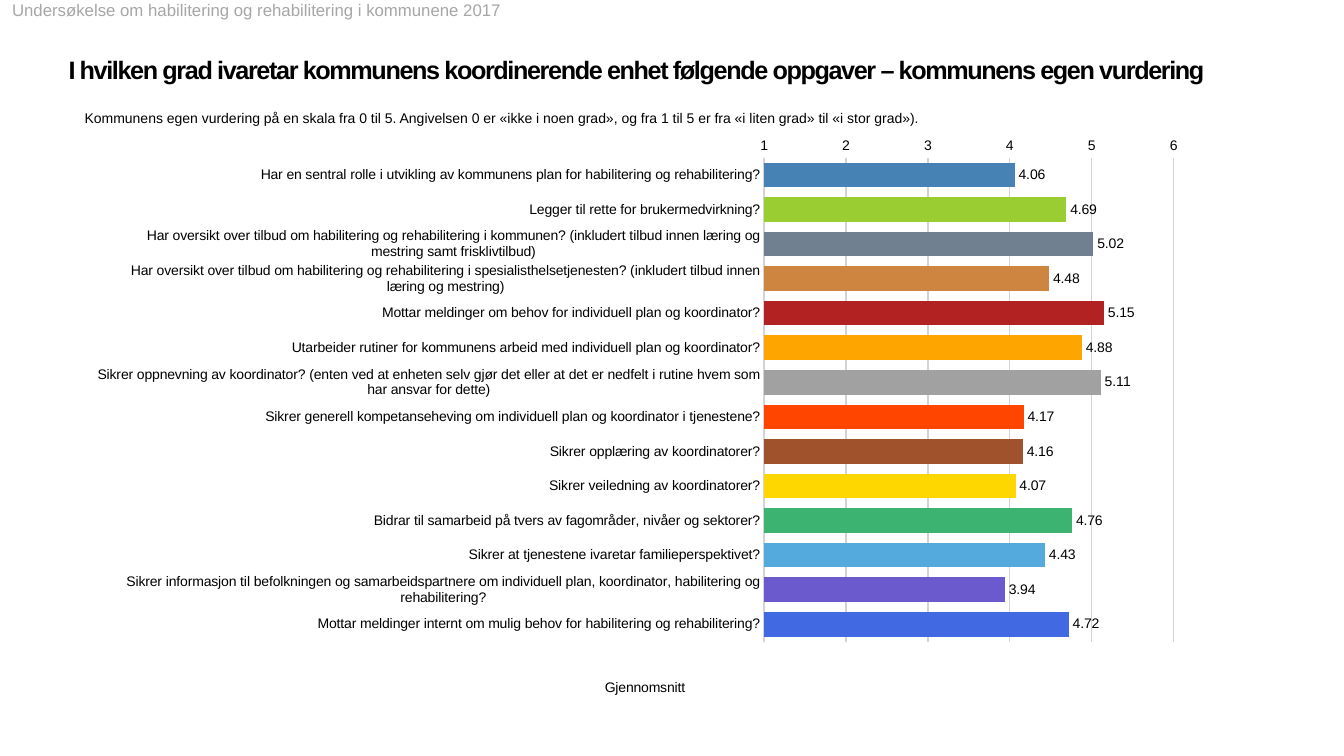
from lxml import etree
from pptx import Presentation
from pptx.chart.data import CategoryChartData
from pptx.dml.color import RGBColor
from pptx.enum import chart as ch, text
from pptx.oxml import ns
from pptx.util import Inches, Pt

FONT = "Arial"
TASKS = [
    ("Har en sentral rolle i utvikling av kommunens plan for habilitering og rehabilitering?", 4.06, "4682B4"),
    ("Legger til rette for brukermedvirkning?", 4.69, "9ACD32"),
    ("Har oversikt over tilbud om habilitering og rehabilitering i kommunen? "
     "(inkludert tilbud innen læring og mestring samt frisklivtilbud)", 5.02, "708090"),
    ("Har oversikt over tilbud om habilitering og rehabilitering i spesialisthelsetjenesten? "
     "(inkludert tilbud innen læring og mestring)", 4.48, "CD853F"),
    ("Mottar meldinger om behov for individuell plan og koordinator?", 5.15, "B22222"),
    ("Utarbeider rutiner for kommunens arbeid med individuell plan og koordinator?", 4.88, "FFA500"),
    ("Sikrer oppnevning av koordinator? (enten ved at enheten selv gjør det eller at det er "
     "nedfelt i rutine hvem som har ansvar for dette)", 5.11, "A1A1A1"),
    ("Sikrer generell kompetanseheving om individuell plan og koordinator i tjenestene?", 4.17, "FF4500"),
    ("Sikrer opplæring av koordinatorer?", 4.16, "A0522D"),
    ("Sikrer veiledning av koordinatorer?", 4.07, "FFD700"),
    ("Bidrar til samarbeid på tvers av fagområder, nivåer og sektorer?", 4.76, "3CB371"),
    ("Sikrer at tjenestene ivaretar familieperspektivet?", 4.43, "54A9DD"),
    ("Sikrer informasjon til befolkningen og samarbeidspartnere om individuell plan, "
     "koordinator, habilitering og rehabilitering?", 3.94, "6A5ACD"),
    ("Mottar meldinger internt om mulig behov for habilitering og rehabilitering?", 4.72, "4169E1"),
]


def rgb(value):
    return RGBColor.from_string(value)


def style(font, size, color="000000", bold=False):
    font.name, font.size, font.bold = FONT, Pt(size), bold
    font.color.rgb = rgb(color)


def add_text(s, box, words, size, color="000000", bold=False,
             anchor=text.MSO_ANCHOR.TOP, spacing=0):
    tf = s.shapes.add_textbox(*map(Inches, box)).text_frame
    tf.word_wrap = True
    tf.margin_left = tf.margin_right = tf.margin_top = tf.margin_bottom = 0
    tf.vertical_anchor = anchor
    p = tf.paragraphs[0]
    r = p.add_run()
    r.text = words
    style(p.font, size, color, bold)
    if spacing:
        r.font._element.set("spc", str(spacing * 100))


def set_layout(parent, after, target=None, **shares):
    """Place a chart part by shares of the chart's size."""
    for old in parent.findall(ns.qn("c:layout")):
        parent.remove(old)
    layout = etree.Element(ns.qn("c:layout"))
    manual = etree.SubElement(layout, ns.qn("c:manualLayout"))
    settings = {"layoutTarget": target} if target else {}
    settings.update(xMode="edge", yMode="edge", **shares)
    for name, value in settings.items():
        etree.SubElement(manual, ns.qn("c:" + name)).set("val", str(value))
    if after is None:
        parent.insert(0, layout)
    else:
        after.addnext(layout)


def add_bars(s, box):
    data = CategoryChartData()
    data.categories = [task for task, _, _ in TASKS]
    data.add_series("Series 1", [score for _, score, _ in TASKS])
    chart = s.shapes.add_chart(ch.XL_CHART_TYPE.BAR_CLUSTERED,
                               *map(Inches, box), data).chart
    chart.has_legend = chart.has_title = False
    style(chart.font, 10)

    # Bars and value labels
    plot = chart.plots[0]
    plot.gap_width = 40
    plot.vary_by_categories = False
    for i, (_, _, color) in enumerate(TASKS):
        fill = plot.series[0].points[i].format.fill
        fill.solid()
        fill.fore_color.rgb = rgb(color)
    plot.has_data_labels = True
    labels = plot.data_labels
    labels.show_value = True
    labels.number_format, labels.number_format_is_linked = "0.00", False
    labels.position = ch.XL_LABEL_POSITION.OUTSIDE_END
    style(labels.font, 10)

    # Axes: first task on top, scale at the bottom
    tasks, scale = chart.category_axis, chart.value_axis
    tasks.reverse_order = True
    tasks.crosses = ch.XL_AXIS_CROSSES.MAXIMUM
    for axis in (tasks, scale):
        axis.major_tick_mark = axis.minor_tick_mark = ch.XL_TICK_MARK.NONE
        axis.format.line.fill.background()
        style(axis.tick_labels.font, 10)
    scale.minimum_scale, scale.maximum_scale, scale.major_unit = 1, 6, 1
    scale.tick_labels.number_format = "General"
    scale.tick_labels.number_format_is_linked = False
    grid = scale.major_gridlines.format.line
    grid.color.rgb, grid.width = rgb("D3D3D3"), Pt(1)
    title = scale.axis_title
    title.text_frame.text = "Gjennomsnitt"
    style(title.text_frame.paragraphs[0].font, 10)

    # Plot area and axis title
    title_xml = title._element
    set_layout(title_xml, title_xml.find(ns.qn("c:tx")), x=0.46, y=0.93)
    plot_area = chart._chartSpace.chart.plotArea
    set_layout(plot_area, None, "inner", x=0.607, y=0.02, w=0.372, h=0.85)


def add_survey_slide(prs):
    s = prs.slides.add_slide(prs.slide_layouts[6])
    add_text(s, (0.12, 0, 13.2, 0.25),
             "Undersøkelse om habilitering og rehabilitering i kommunene 2017", 12, "A6A6A6")
    add_text(s, (0.68, 0.24, 12, 0.6),
             "I hvilken grad ivaretar kommunens koordinerende enhet følgende oppgaver "
             "– kommunens egen vurdering", 18, bold=True,
             anchor=text.MSO_ANCHOR.BOTTOM, spacing=-1)
    add_text(s, (0.84, 1.09, 11.8, 0.25),
             "Kommunens egen vurdering på en skala fra 0 til 5. Angivelsen 0 er «ikke i noen grad», "
             "og fra 1 til 5 er fra «i liten grad» til «i stor grad»).", 10)
    add_bars(s, (0.95, 1.37, 10.92, 5.73))


def main():
    prs = Presentation()
    prs.slide_width, prs.slide_height = Inches(13.33), Inches(7.5)
    add_survey_slide(prs)
    prs.save("out.pptx")


if __name__ == "__main__":
    main()
